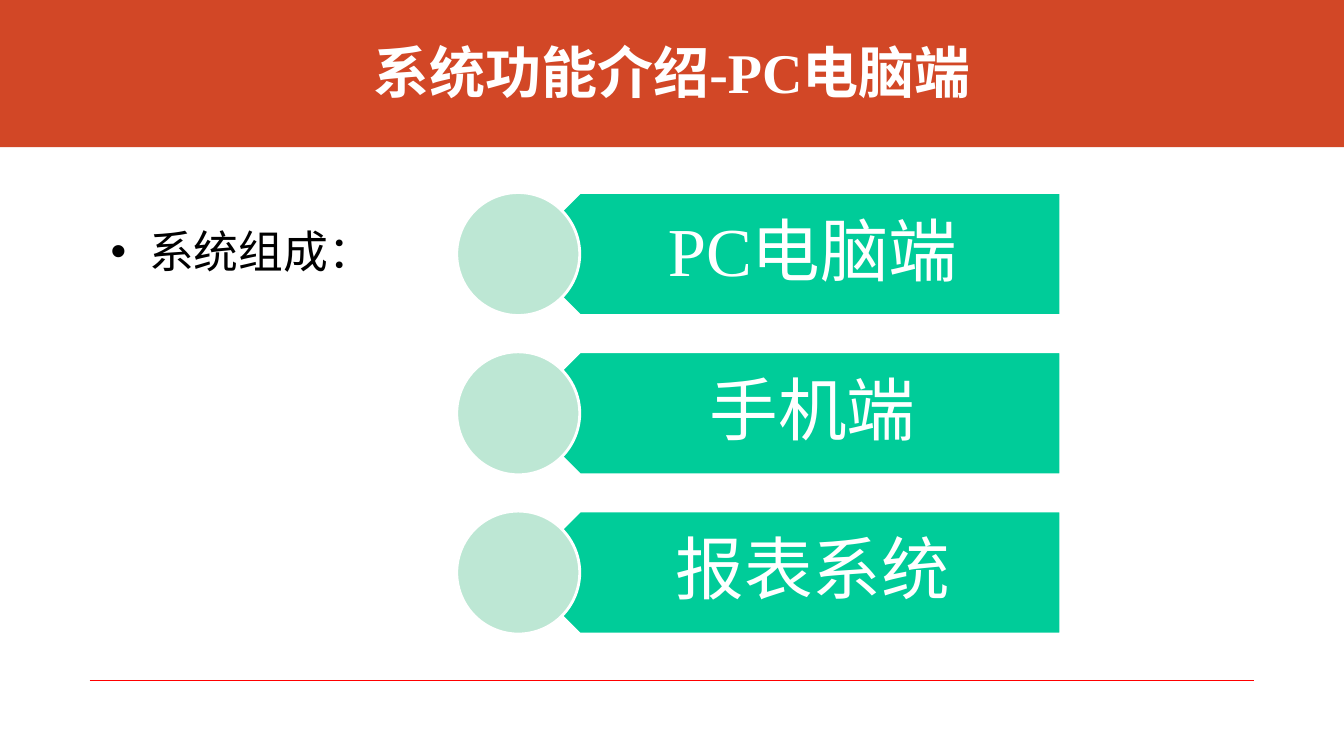
from lxml.etree import SubElement
from pptx import Presentation
from pptx.dml.color import RGBColor
from pptx.enum.shapes import MSO_CONNECTOR as Link, MSO_SHAPE as Shape
from pptx.enum.text import MSO_ANCHOR as Anchor, MSO_AUTO_SIZE as Auto, PP_ALIGN as Align
from pptx.oxml.ns import qn
from pptx.util import Inches, Pt

COLORS = {
    "band": "D24726", "rule": "FF0000", "bar": "00CC99",
    "disc": "BDE7D4", "white": "FFFFFF", "black": "000000",
}
FONT = "Times New Roman"
PARTS = ["PC电脑端", "手机端", "报表系统"]
TOP, STEP, SIZE = 1.91, 1.58, 1.22


def color(name):
    return RGBColor.from_string(COLORS[name])


def place(item, *box):
    for key, val in zip(("left", "top", "width", "height"), box):
        setattr(item, key, Inches(val))


def add_shape(slide, kind, box, fill, line=None):
    shape = slide.shapes.add_shape(kind, *map(Inches, box))
    shape.shadow.inherit = False
    shape.fill.solid()
    shape.fill.fore_color.rgb = color(fill)
    if line:
        shape.line.color.rgb = color(line)
        shape.line.width = Pt(2)
    else:
        shape.line.fill.background()
    return shape


def write(item, text, size, tint, align=Align.CENTER, bold=False, **frame):
    """Fill a text holder with one formatted paragraph and return it."""
    body = item.text_frame
    formats = {"word_wrap": True, "auto_size": Auto.NONE,
               "vertical_anchor": Anchor.MIDDLE, **frame}
    for key, val in formats.items():
        setattr(body, key, val)
    para = body.paragraphs[0]
    para.alignment = align
    run = para.add_run()
    run.text = text
    for key, val in {"name": FONT, "size": Pt(size), "bold": bold}.items():
        setattr(run.font, key, val)
    run.font.color.rgb = color(tint)
    return para


def add_title(slide, text):
    title = slide.shapes.title
    place(title, 1, 0.25, 11.33, 0.92)
    write(title, text, 40, "white", bold=True)
    band = add_shape(slide, Shape.RECTANGLE, (0, 0, 13.33, 1.46), "band")
    title.element.addprevious(band.element)


def add_rule(slide):
    ends = map(Inches, (0.89, 6.75, 12.44, 6.75))
    rule = slide.shapes.add_connector(Link.STRAIGHT, *ends)
    rule.line.color.rgb = color("rule")
    rule.line.width = Pt(1)
    SubElement(rule.element.spPr, qn("a:effectLst"))


def add_bullet(slide, text):
    box = slide.shapes.add_textbox(*map(Inches, (1, 2.17, 3.4, 0.7)))
    para = write(box, text, 32, "black", Align.LEFT, vertical_anchor=Anchor.TOP)
    props = para._p.get_or_add_pPr()
    props.set("marL", str(Inches(0.38)))
    props.set("indent", str(Inches(-0.38)))
    SubElement(props, qn("a:buFont"), typeface="Arial")
    SubElement(props, qn("a:buChar"), char="•")


def add_part(slide, text, top):
    bar = add_shape(slide, Shape.PENTAGON, (5.14, top, 5.38, SIZE), "bar", "white")
    bar.rotation = 180
    label = slide.shapes.add_textbox(*map(Inches, (5.44, top, 5.08, SIZE)))
    para = write(label, text, 49, "white",
                 margin_left=Inches(0.54), margin_right=Inches(0.38),
                 margin_top=Inches(0.2), margin_bottom=Inches(0.2))
    para.line_spacing = 0.9
    add_shape(slide, Shape.OVAL, (4.53, top, SIZE, SIZE), "disc", "white")


def main():
    deck = Presentation()
    deck.slide_width, deck.slide_height = Inches(13.33), Inches(7.5)
    slide = deck.slides.add_slide(deck.slide_layouts[5])
    add_title(slide, "系统功能介绍-PC电脑端")
    add_rule(slide)
    add_bullet(slide, "系统组成：")
    for row, part in enumerate(PARTS):
        add_part(slide, part, TOP + row * STEP)
    deck.save("out.pptx")


if __name__ == "__main__":
    main()
